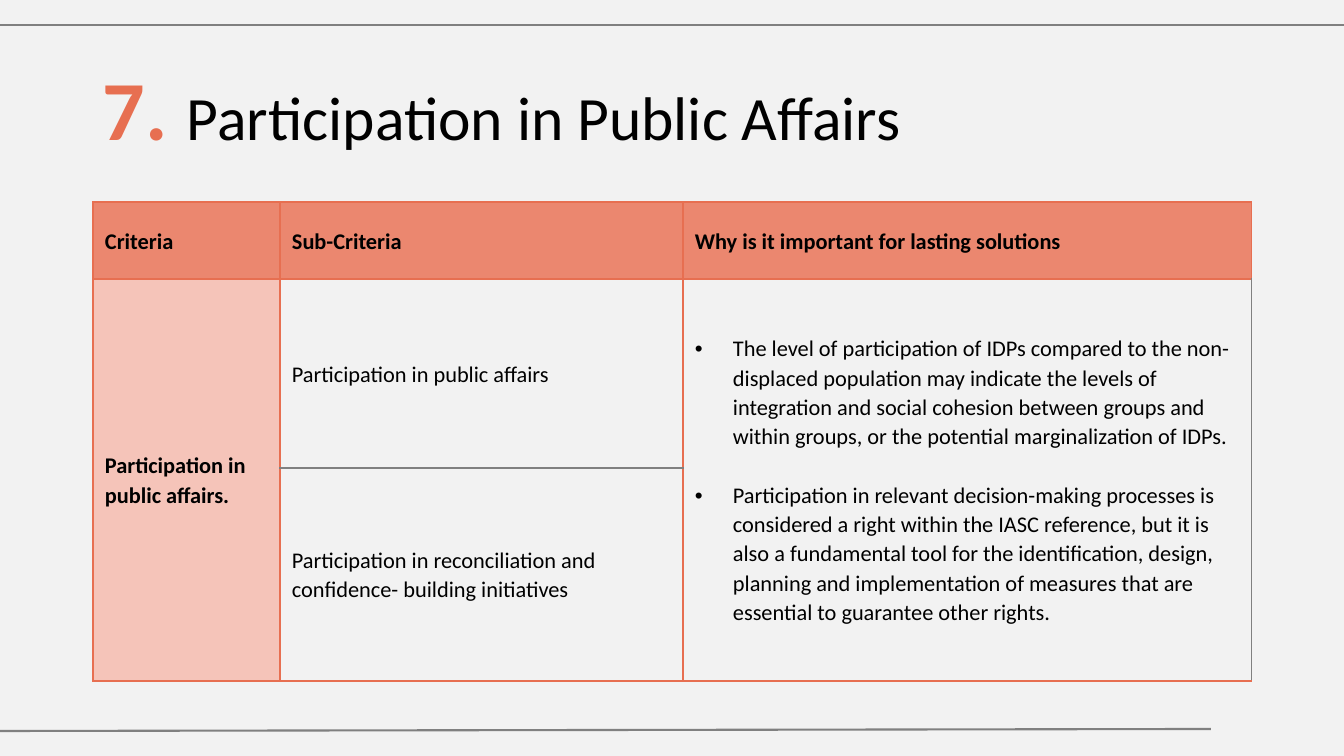
from lxml import etree
from pptx import Presentation
from pptx.dml.color import RGBColor
from pptx.enum.shapes import MSO_CONNECTOR
from pptx.enum.text import MSO_ANCHOR, PP_ALIGN
from pptx.oxml.ns import qn
from pptx.util import Pt

# Content
TITLE = [("7. ", 60, "coral", True), ("Participation in Public Affairs", 44, "black", False)]
HEADERS = ["Criteria", "Sub-Criteria", "Why is it important for lasting solutions"]
CRITERION = "Participation in public affairs."
SUB_CRITERIA = [
    "Participation in public affairs",
    "Participation in reconciliation and confidence- building initiatives",
]
REASONS = [
    "The level of participation of IDPs compared to the non-displaced population may indicate "
    "the levels of integration and social cohesion between groups and within groups, or the "
    "potential marginalization of IDPs.",
    "Participation in relevant decision-making processes is considered a right within the IASC "
    "reference, but it is also a fundamental tool for the identification, design, planning and "
    "implementation of measures that are essential to guarantee other rights.",
]

# Look and layout, lengths in px
COLORS = {"paper": "F2F2F2", "coral": "E76F51", "header": "EB876F", "criterion": "F5C4B9",
          "gray": "808080", "black": "000000"}
FONT = "Calibri"
PX = 914400 / 100.8
SLIDE_W, SLIDE_H = 1344, 756
LEFT, WIDTH = 93, 1159
TITLE_TOP, TITLE_H = 40, 146
TABLE_TOP = 202
COLUMNS = [187, 403, 569]
ROWS = [77, 189, 213]
PAD_X, PAD_Y, BULLET_INDENT = 12, 8, 38
RULES = [(0, 25, SLIDE_W, 25), (0, 731, 1211, 729)]


def px(length):
    return round(length * PX)


def rgb(name):
    return RGBColor.from_string(COLORS[name])


def add_run(paragraph, text, size, color, bold):
    run = paragraph.add_run()
    run.text = text
    font = run.font
    font.name, font.size, font.bold = FONT, Pt(size), bold
    font.color.rgb = rgb(color)


def set_border(cell, side, color):
    line = etree.SubElement(cell._tc.get_or_add_tcPr(), qn(f"a:{side}"), w=str(Pt(1)))
    fill = etree.SubElement(line, qn("a:solidFill"))
    etree.SubElement(fill, qn("a:srgbClr"), val=COLORS[color])


def fill_cell(cell, texts, bold=False, bullets=False):
    cell.vertical_anchor = MSO_ANCHOR.MIDDLE
    cell.margin_left = cell.margin_right = px(PAD_X)
    cell.margin_top = cell.margin_bottom = px(PAD_Y)
    for i, text in enumerate(texts):
        frame = cell.text_frame
        paragraph = frame.paragraphs[0] if i == 0 else frame.add_paragraph()
        paragraph.line_spacing = 1.07
        paragraph.space_after = Pt(8)
        if bullets:
            last = i == len(texts) - 1
            paragraph.space_after = Pt(0 if last else 21)
            props = paragraph._p.get_or_add_pPr()
            props.set("marL", str(px(BULLET_INDENT)))
            props.set("indent", str(-px(BULLET_INDENT)))
            etree.SubElement(props, qn("a:buFont"), typeface="Arial")
            etree.SubElement(props, qn("a:buChar"), char="•")
        add_run(paragraph, text, 16, "black", bold)


prs = Presentation()
prs.slide_width, prs.slide_height = px(SLIDE_W), px(SLIDE_H)
slide = prs.slides.add_slide(prs.slide_layouts[6])
slide.background.fill.solid()
slide.background.fill.fore_color.rgb = rgb("paper")

# Rules at the top and bottom
for ends in RULES:
    rule = slide.shapes.add_connector(MSO_CONNECTOR.STRAIGHT, *map(px, ends))
    rule.line.color.rgb = rgb("gray")
    rule.line.width = Pt(1.5)
    etree.SubElement(rule._element.spPr, qn("a:effectLst"))

# Title
title = slide.shapes.add_textbox(px(LEFT), px(TITLE_TOP), px(WIDTH), px(TITLE_H)).text_frame
title.word_wrap = True
title.vertical_anchor = MSO_ANCHOR.MIDDLE
heading = title.paragraphs[0]
heading.alignment = PP_ALIGN.LEFT
heading.line_spacing = 0.9
for part in TITLE:
    add_run(heading, *part)

# Criteria table
criteria = slide.shapes.add_table(len(ROWS), len(COLUMNS), px(LEFT), px(TABLE_TOP),
                                  px(WIDTH), px(sum(ROWS))).table
criteria.horz_banding = False
for column, width in zip(criteria.columns, COLUMNS):
    column.width = px(width)
for row, height in zip(criteria.rows, ROWS):
    row.height = px(height)
for merged in (0, 2):
    criteria.cell(1, merged).merge(criteria.cell(2, merged))

for c, header in enumerate(HEADERS):
    fill_cell(criteria.cell(0, c), [header], bold=True)
fill_cell(criteria.cell(1, 0), [CRITERION], bold=True)
for r, sub_criterion in enumerate(SUB_CRITERIA, 1):
    fill_cell(criteria.cell(r, 1), [sub_criterion])
fill_cell(criteria.cell(1, 2), REASONS, bullets=True)

# Borders come before the fill in each cell; gray marks the inner row line and right edge
for r in range(len(ROWS)):
    for c in range(len(COLUMNS)):
        cell = criteria.cell(r, c)
        gray_sides = set()
        if r > 0 and c == 2:
            gray_sides.add("lnR")
        if c == 1 and r > 0:
            gray_sides.add("lnB" if r == 1 else "lnT")
        for side in ("lnL", "lnR", "lnT", "lnB"):
            set_border(cell, side, "gray" if side in gray_sides else "coral")
        if r == 0 or c == 0:
            cell.fill.solid()
            cell.fill.fore_color.rgb = rgb("header" if r == 0 else "criterion")
        else:
            cell.fill.background()

prs.save("out.pptx")
